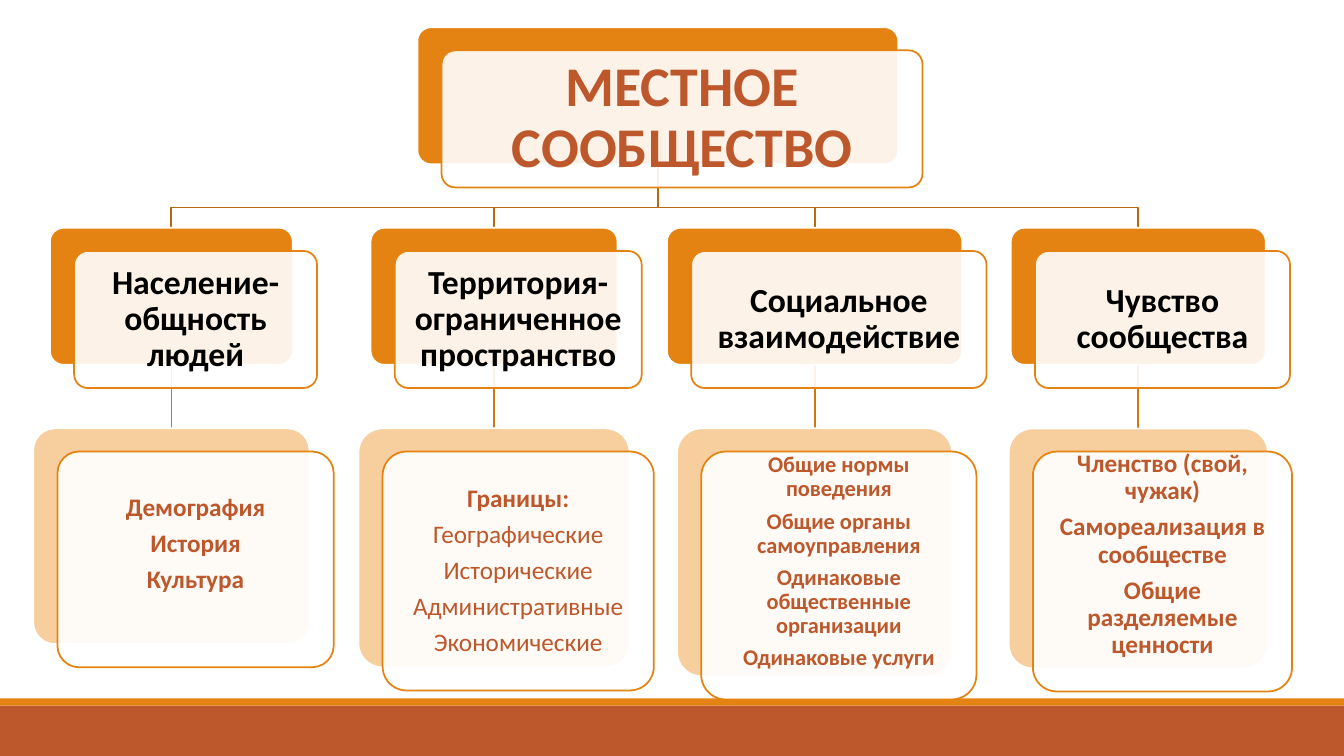
from lxml.etree import SubElement
from pptx import Presentation
from pptx.dml.color import RGBColor
from pptx.enum.shapes import MSO_CONNECTOR, MSO_SHAPE
from pptx.enum.text import MSO_ANCHOR, MSO_AUTO_SIZE, PP_ALIGN
from pptx.oxml.ns import qn
from pptx.util import Pt

SCALE = 9144
WIDE, HIGH = 1333, 750
RUST, AMBER, PEACH, WHITE, BLACK = "BD582C", "E48312", "F7CE9D", "FFFFFF", "000000"
BRANCH, STEM = "B7690E", "CF7710"
DX, DY = 24, 23
ROOT = (414, 27, 477, 136)
HEAD_TOP, HEAD_HIGH = 226, 136
LIST_TOP = 425

COLUMNS = [
    dict(mid=170, head="Население-общность людей", wide=241, box=(274, 214),
         items=["Демография", "История", "Культура"], size=18, bold=3, tail=30),
    dict(mid=490, head="Территория-ограниченное пространство", wide=245, box=(269, 237),
         items=["Границы:", "Географические", "Исторические", "Административные",
                "Экономические"], size=18, bold=1, tail=0),
    dict(mid=808, head="Социальное взаимодействие", wide=293, box=(273, 246),
         items=["Общие нормы поведения", "Общие органы самоуправления",
                "Одинаковые общественные организации", "Одинаковые услуги"],
         size=16, bold=4, tail=27),
    dict(mid=1129, head="Чувство сообщества", wide=253, box=(257, 238),
         items=["Членство (свой, чужак)", "Самореализация в сообществе",
                "Общие разделяемые ценности"], size=18, bold=3, tail=33),
]


def px(num):
    """Turn px into EMU."""
    return round(num * SCALE)


def paint(form, tint):
    """Give a fill, line or font format a hex colour."""
    if hasattr(form, "solid"):
        form.solid()
        form.fore_color.rgb = RGBColor.from_string(tint)
    elif hasattr(form, "fill"):
        paint(form.fill, tint)
    else:
        form.rgb = RGBColor.from_string(tint)


def block(slide, kind, box, fill, line=None):
    """Add a filled preset shape."""
    shape = slide.shapes.add_shape(kind, *map(px, box))
    shape.shadow.inherit = False
    paint(shape.fill, fill)
    if line:
        paint(shape.line, line)
        shape.line.width = Pt(1.25)
    else:
        shape.line.fill.background()
    return shape


def card(slide, box, fill):
    """Draw a rounded plate with a pale face shifted over it; return the face."""
    left, top, wide, high = box
    back = block(slide, MSO_SHAPE.ROUNDED_RECTANGLE, box, fill, WHITE)
    face = block(slide, MSO_SHAPE.ROUNDED_RECTANGLE,
                 (left + DX, top + DY, wide, high), WHITE, AMBER)
    back.adjustments[0] = face.adjustments[0] = 0.1
    tint = face.fill._xPr.find(qn("a:solidFill"))[0]
    SubElement(tint, qn("a:alpha"), val="90000")
    return face


def write(shape, lines, size, tint, pad, bold=1, tail=0):
    """Fill a shape with centred paragraphs, the first few of them bold."""
    frame = shape.text_frame
    frame.text = "\n".join(lines)
    frame.word_wrap = True
    frame.auto_size = MSO_AUTO_SIZE.NONE
    frame.vertical_anchor = MSO_ANCHOR.MIDDLE
    frame.margin_left = frame.margin_right = frame.margin_top = px(pad)
    frame.margin_bottom = px(pad + tail)
    for row, para in enumerate(frame.paragraphs):
        para.alignment = PP_ALIGN.CENTER
        para.line_spacing = 0.9
        para.space_before = Pt(0)
        para.space_after = Pt(round(size * 0.35, 1))
        props = para._p.get_or_add_pPr()
        props.set("marL", "0")
        props.set("indent", "0")
        SubElement(props, qn("a:buNone"))
        font = para.runs[0].font
        font.name, font.size, font.bold = "Calibri", Pt(size), row < bold
        paint(font, tint)


def seat(slide, holder, face, gap):
    """Move a placeholder inside a face and bring it to the front."""
    holder.left, holder.top = face.left + px(gap), face.top + px(gap)
    holder.width, holder.height = face.width - px(2 * gap), face.height - px(2 * gap)
    slide.shapes._spTree.append(holder._element)


def footer(slide, box):
    """Draw the two bands at the foot of the slide."""
    left, top, wide, high = box
    block(slide, MSO_SHAPE.RECTANGLE, (left, top + 7, wide, high - 7), RUST)
    block(slide, MSO_SHAPE.RECTANGLE, (left, top, wide, 7), AMBER)


def links(slide, mid):
    """Join the root to a heading and the heading to its list."""
    start = ROOT[0] + ROOT[2] / 2
    base = ROOT[1] + ROOT[3]
    path = slide.shapes.build_freeform(px(start), px(base))
    path.add_line_segments([(px(x), px(y)) for x, y in
                            [(start, 206), (mid, 206), (mid, HEAD_TOP)]], close=False)
    elbow = path.convert_to_shape()
    elbow.shadow.inherit = False
    elbow.fill.background()
    stem = slide.shapes.add_connector(MSO_CONNECTOR.STRAIGHT, px(mid),
                                      px(HEAD_TOP + HEAD_HIGH), px(mid), px(LIST_TOP))
    SubElement(stem._element.spPr, qn("a:effectLst"))
    for shape, tint in ((elbow, BRANCH), (stem, STEM)):
        paint(shape.line, tint)
        shape.line.width = Pt(1.25)


def root(slide, box):
    """Draw the top card with the title."""
    face = card(slide, box, AMBER)
    title = slide.shapes.title
    seat(slide, title, face, 4)
    write(title, ["МЕСТНОЕ СООБЩЕСТВО"], 40, RUST, 17)


def column(slide, data, body):
    """Draw a heading card and the list card under it."""
    mid, wide = data["mid"], data["wide"]
    head = card(slide, (mid - wide / 2, HEAD_TOP, wide, HEAD_HIGH), AMBER)
    write(head, [data["head"]], 24, BLACK, 10)
    wide, high = data["box"]
    face = card(slide, (mid - wide / 2, LIST_TOP, wide, high), PEACH)
    seat(slide, body, face, 7)
    write(body, data["items"], data["size"], RUST, 7, data["bold"], data["tail"])


def main():
    """Build and save the slide."""
    deck = Presentation()
    deck.slide_width, deck.slide_height = px(WIDE), px(HIGH)
    slide = deck.slides.add_slide(deck.slide_layouts[4])
    bodies = [item for item in slide.placeholders if item.placeholder_format.idx]
    footer(slide, (0, 693, WIDE, 57))
    for data in COLUMNS:
        links(slide, data["mid"])
    root(slide, ROOT)
    for data, body in zip(COLUMNS, bodies):
        column(slide, data, body)
    deck.save("out.pptx")


if __name__ == "__main__":
    main()
